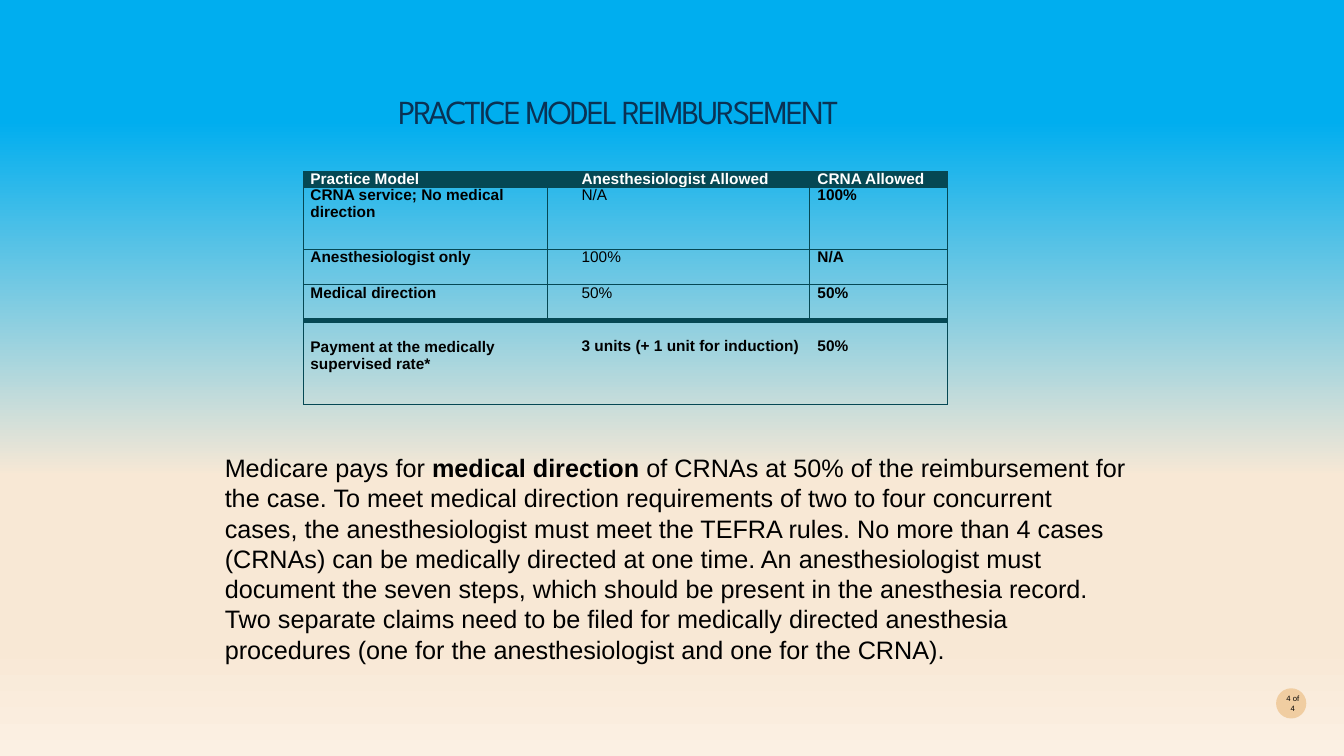
from dataclasses import dataclass

from lxml.etree import SubElement
from pptx import Presentation
from pptx.dml.color import RGBColor
from pptx.enum.shapes import MSO_SHAPE as Shape
from pptx.enum.text import MSO_ANCHOR as Anchor, PP_ALIGN as Align
from pptx.oxml.ns import qn
from pptx.slide import Slide
from pptx.table import _Cell as Cell
from pptx.text.text import TextFrame, _Run as Run
from pptx.util import Emu, Inches, Pt

COLUMNS = 160
SLIDE_WIDTH, SLIDE_HEIGHT = Inches(13.33), Inches(7.5)
TEAL, BLACK, WHITE = "054854", "000000", "FFFFFF"
BACKGROUND_STOPS = [(16, "00AEEF"), (63, "F8E8D5"), (85, "F8E8D5"), (100, "FBF0E3")]
THIN, THICK = 0.5, 4


@dataclass
class Column:
    width: float
    indent: float


@dataclass
class Row:
    height: float
    texts: tuple[str, str, str]
    leading: float
    top_gaps: tuple[float, float, float] = (0, 0, 0)
    bold_middle: bool = False
    top_line: float = THIN
    inner_lines: bool = True
    header: bool = False


TABLE_COLUMNS = [Column(29.04, 0.84), Column(31.2, 4.08), Column(16.44, 0.96)]
TABLE_ROWS = [
    Row(1.92, ("Practice Model", "Anesthesiologist Allowed", "CRNA Allowed"), 11.6,
        bold_middle=True, header=True),
    Row(7.32, ("CRNA service; No medical direction", "N/A", "100%"), 11.7),
    Row(4.2, ("Anesthesiologist only", "100%", "N/A"), 11.7),
    Row(4.32, ("Medical direction", "50%", "50%"), 12.7),
    Row(9.96, ("Payment at the medically supervised rate*",
               "3 units (+ 1 unit for induction)", "50%"), 12.2,
        top_gaps=(2.2, 2, 2), bold_middle=True, top_line=THICK, inner_lines=False),
]
BODY_RUNS = [
    ("Medicare pays for ", False),
    ("medical direction ", True),
    ("of CRNAs at 50% of the reimbursement for the case. To meet medical direction "
     "requirements of two to four concurrent cases, the anesthesiologist must meet the "
     "TEFRA rules. No more than 4 cases (CRNAs) can be medically directed at one time. "
     "An anesthesiologist must document the seven steps, which should be present in the "
     "anesthesia record. Two separate claims need to be filed for medically directed "
     "anesthesia procedures (one for the anesthesiologist and one for the CRNA).", False),
]


def grid(units: float) -> Emu:
    """Length of a number of square grid cells, 160 to the slide's width."""
    return Emu(round(SLIDE_WIDTH * units / COLUMNS))


def color(value: str) -> RGBColor:
    return RGBColor.from_string(value)


def style(run: Run, size: float, shade: str, bold: bool = False, face: str = "Arial") -> None:
    run.font.name, run.font.size, run.font.bold = face, Pt(size), bold
    run.font.color.rgb = color(shade)


def set_margins(frame: TextFrame | Cell, left: float = 0, top: float = 0) -> None:
    frame.margin_left, frame.margin_top = grid(left), grid(top)
    frame.margin_right = frame.margin_bottom = 0


def paint_background(page: Slide) -> None:
    fill = page.background.fill
    fill.gradient()
    fill.gradient_angle = 270
    stops = page.background._cSld.find(".//" + qn("a:gsLst"))
    for stop in list(stops):
        stops.remove(stop)
    for position, shade in BACKGROUND_STOPS:
        stop = SubElement(stops, qn("a:gs"), pos=str(position * 1000))
        SubElement(stop, qn("a:srgbClr"), val=shade)


def set_borders(cell: Cell, left: float, right: float, top: float, bottom: float) -> None:
    """Draw the cell's sides with widths in points; zero hides a side."""
    properties = cell._tc.get_or_add_tcPr()
    for side, width in zip("LRTB", (left, right, top, bottom)):
        line = SubElement(properties, qn(f"a:ln{side}"), w=str(Pt(width)))
        if width:
            SubElement(SubElement(line, qn("a:solidFill")), qn("a:srgbClr"), val=TEAL)
        else:
            SubElement(line, qn("a:noFill"))


def add_title(page: Slide) -> None:
    title = page.shapes.title
    title.left, title.top, title.width, title.height = map(grid, (24.4, 11.4, 98.4, 4.8))
    frame = title.text_frame
    set_margins(frame)
    frame.vertical_anchor = Anchor.TOP
    frame.text = "PRACTICE MODEL REIMBURSEMENT"
    para = frame.paragraphs[0]
    para.alignment, para.line_spacing = Align.CENTER, 0.9
    style(para.runs[0], 24, "0A3254", face="League Spartan")
    para.runs[0].font._element.set("spc", "-150")


def fill_cell(cell: Cell, row: Row, index: int) -> None:
    last = len(TABLE_COLUMNS) - 1
    row_end = TABLE_ROWS.index(row) + 1
    inner = THIN if row.inner_lines else 0
    below = TABLE_ROWS[row_end].top_line if row_end < len(TABLE_ROWS) else THIN
    set_borders(cell, inner if index else THIN, inner if index < last else THIN,
                row.top_line, below)
    if row.header:
        cell.fill.solid()
        cell.fill.fore_color.rgb = color(TEAL)
    else:
        cell.fill.background()
    set_margins(cell, TABLE_COLUMNS[index].indent, row.top_gaps[index])
    cell.vertical_anchor = Anchor.TOP
    cell.text_frame.text = row.texts[index]
    para = cell.text_frame.paragraphs[0]
    para.line_spacing = Pt(row.leading)
    style(para.runs[0], 11, WHITE if row.header else BLACK, index != 1 or row.bold_middle)


def add_reimbursement_table(page: Slide) -> None:
    width = sum(column.width for column in TABLE_COLUMNS)
    height = sum(row.height for row in TABLE_ROWS)
    table = page.shapes.add_table(len(TABLE_ROWS), len(TABLE_COLUMNS),
                                  *map(grid, (36.12, 20.4, width, height))).table
    table.first_row = table.horz_banding = False
    for index, column in enumerate(TABLE_COLUMNS):
        table.columns[index].width = grid(column.width)
    for number, row in enumerate(TABLE_ROWS):
        table.rows[number].height = grid(row.height)
        for index in range(len(TABLE_COLUMNS)):
            fill_cell(table.cell(number, index), row, index)


def add_body(page: Slide) -> None:
    box = page.shapes.add_textbox(*map(grid, (24.6, 53.28, 110.76, 26.64)))
    frame = box.text_frame
    frame.word_wrap = True
    frame.margin_left = grid(2.16)
    for text, bold in BODY_RUNS:
        run = frame.paragraphs[0].add_run()
        run.text = text
        style(run, 18, BLACK, bold)


def add_page_badge(page: Slide) -> None:
    badge = page.shapes.add_shape(Shape.OVAL, *map(grid, (151.92, 81.96, 3.6, 3.6)))
    badge.shadow.inherit = False
    badge.fill.solid()
    badge.fill.fore_color.rgb = color("F0CDA1")
    badge.line.fill.background()
    frame = badge.text_frame
    set_margins(frame, left=0.4)
    frame.word_wrap = True
    frame.vertical_anchor = Anchor.MIDDLE
    frame.text = "4 of 4"
    frame.paragraphs[0].alignment = Align.CENTER
    style(frame.paragraphs[0].runs[0], 5.5, BLACK)


def main() -> None:
    deck = Presentation()
    deck.slide_width, deck.slide_height = SLIDE_WIDTH, SLIDE_HEIGHT
    page = deck.slides.add_slide(deck.slide_layouts.get_by_name("Title Only"))
    paint_background(page)
    add_title(page)
    add_page_badge(page)
    add_reimbursement_table(page)
    add_body(page)
    deck.save("out.pptx")


if __name__ == "__main__":
    main()
